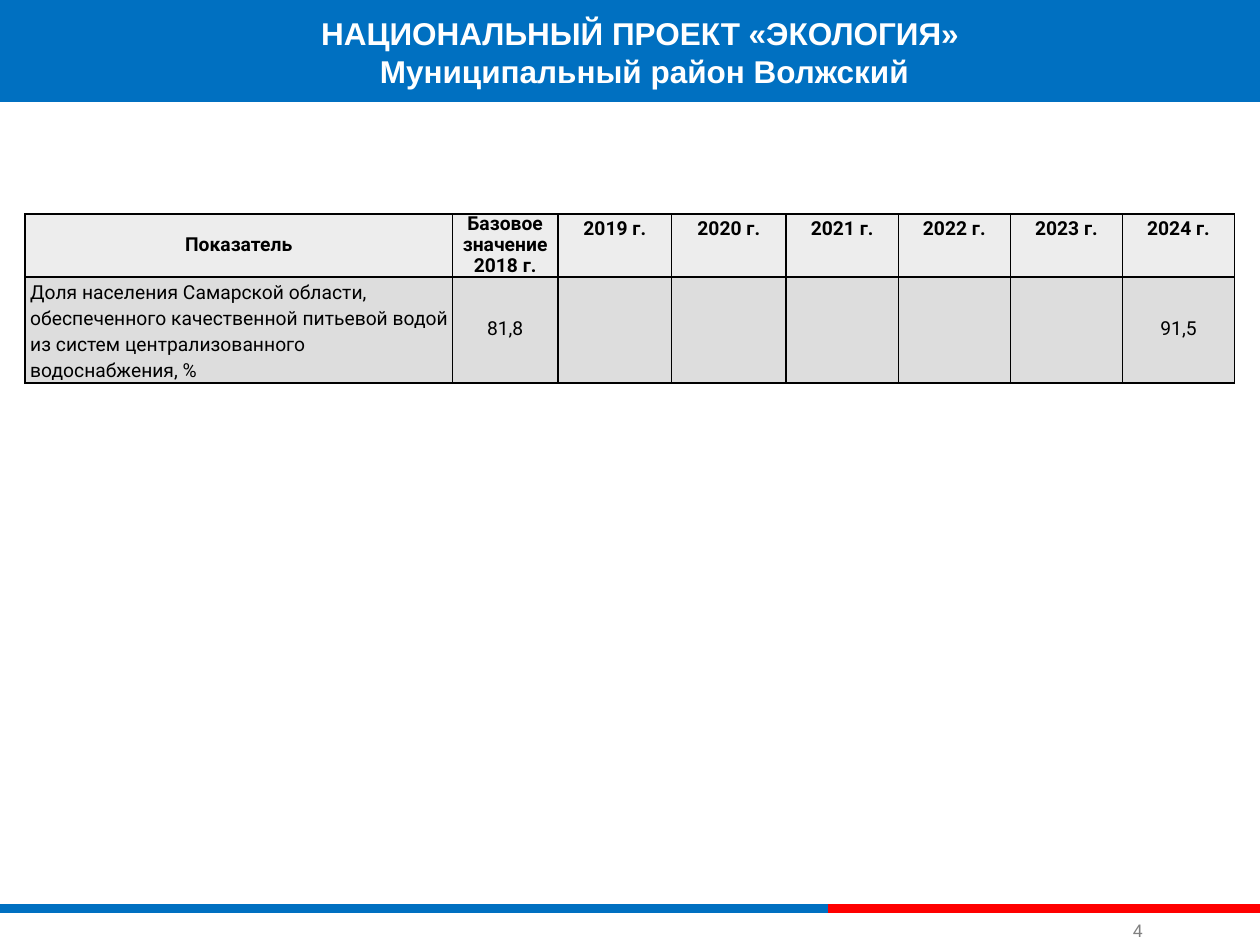
import dataclasses
import typing

import lxml.etree
import pptx
import pptx.dml.color
import pptx.enum.shapes
import pptx.enum.text
import pptx.oxml.ns
import pptx.util

Inches = pptx.util.Inches
Pt = pptx.util.Pt
Align = pptx.enum.text.PP_ALIGN
Anchor = pptx.enum.text.MSO_ANCHOR
qn = pptx.oxml.ns.qn

COLORS = {"blue": "0070C1", "red": "FF0000", "white": "FFFFFF", "black": "000000",
          "number": "808080", "header": "EDEDED", "body": "BFBFBF"}
BODY_ALPHA = 52000
COLUMN_WIDTHS = [3.39, 0.84, 0.9, 0.91] + [0.89] * 4
ROW_HEIGHTS = [0.5, 0.84]


@dataclasses.dataclass
class Stripe:
    start: float
    end: float
    color: str


@dataclasses.dataclass
class CellText:
    text: str
    anchor: typing.Any = Anchor.MIDDLE
    align: typing.Any = Align.CENTER
    spacing: typing.Any = Pt(12)
    margin: float = 0.01


def rgb(name: str) -> pptx.dml.color.RGBColor:
    return pptx.dml.color.RGBColor.from_string(COLORS[name])


def set_font(font, color: str, **formats) -> None:
    for name, value in formats.items():
        setattr(font, name, value)
    font.color.rgb = rgb(color)


def set_frame(frame, horizontal: float, vertical: float, anchor, wrap: bool) -> None:
    formats = {"margin_left": Inches(horizontal), "margin_right": Inches(horizontal),
               "margin_top": Inches(vertical), "margin_bottom": Inches(vertical),
               "vertical_anchor": anchor, "word_wrap": wrap}
    for name, value in formats.items():
        setattr(frame, name, value)


def draw_stripe(page, stripe: Stripe) -> None:
    line = page.shapes.add_connector(
        pptx.enum.shapes.MSO_CONNECTOR.STRAIGHT,
        Inches(stripe.start), Inches(7.21), Inches(stripe.end), Inches(7.21))
    line.line.color.rgb = rgb(stripe.color)
    line.line.width = Pt(5)
    lxml.etree.SubElement(line.element.spPr, qn("a:effectLst"))


def set_borders(cell) -> None:
    properties = cell._tc.get_or_add_tcPr()
    for side in ("lnL", "lnR", "lnT", "lnB"):
        border = lxml.etree.SubElement(properties, qn(f"a:{side}"), w=str(Pt(1)))
        fill = lxml.etree.SubElement(border, qn("a:solidFill"))
        lxml.etree.SubElement(fill, qn("a:srgbClr"), val=COLORS["black"])


def fill_cell(cell, color: str, alpha: typing.Optional[int] = None) -> None:
    cell.fill.solid()
    cell.fill.fore_color.rgb = rgb(color)
    if alpha:
        tone = cell._tc.tcPr.find(qn("a:solidFill")).find(qn("a:srgbClr"))
        lxml.etree.SubElement(tone, qn("a:alpha"), val=str(alpha))


def write_cell(cell, content: CellText, bold: bool) -> None:
    formats = {"margin_left": Inches(content.margin), "margin_right": Inches(content.margin),
               "margin_top": 0, "margin_bottom": 0, "vertical_anchor": content.anchor}
    for name, value in formats.items():
        setattr(cell, name, value)
    para = cell.text_frame.paragraphs[0]
    para.alignment = content.align
    para.line_spacing = content.spacing
    if content.align == Align.LEFT:
        para._p.get_or_add_pPr().set("marL", str(Inches(0.03)))
    span = para.add_run()
    span.text = content.text
    set_font(span.font, "black", name="Roboto", size=Pt(11), bold=bold)


def draw_table(page, rows: typing.List[typing.List[typing.Optional[CellText]]]) -> None:
    table = page.shapes.add_table(
        len(rows), len(COLUMN_WIDTHS), Inches(0.2), Inches(1.7),
        Inches(sum(COLUMN_WIDTHS)), Inches(sum(ROW_HEIGHTS))).table
    for column, width in zip(table.columns, COLUMN_WIDTHS):
        column.width = Inches(width)
    for row, height in zip(table.rows, ROW_HEIGHTS):
        row.height = Inches(height)
    for row_index, row in enumerate(rows):
        header = row_index == 0
        for column_index, content in enumerate(row):
            cell = table.cell(row_index, column_index)
            set_borders(cell)
            if header:
                fill_cell(cell, "header")
            else:
                fill_cell(cell, "body", BODY_ALPHA)
            if content:
                write_cell(cell, content, bold=header)


def draw_title(page, lines: typing.List[str]) -> None:
    title = page.shapes.title
    title.left, title.top = Inches(2.47), Inches(0.06)
    title.width, title.height = Inches(5.29), Inches(0.71)
    frame = title.text_frame
    set_frame(frame, 0.05, 0.05, Anchor.TOP, True)
    frame.auto_size = pptx.enum.text.MSO_AUTO_SIZE.NONE
    frame.text = "\n".join(lines)
    for para in frame.paragraphs:
        para.alignment = Align.CENTER
        set_font(para.runs[0].font, "white", name="Arial", size=Pt(18), bold=True)
    # Bring the title in front of the band
    title.element.getparent().append(title.element)


def main() -> None:
    deck = pptx.Presentation()
    deck.slide_width, deck.slide_height = Inches(10), Inches(7.5)
    page = deck.slides.add_slide(deck.slide_layouts[5])

    # Footer stripes and header band
    for stripe in (Stripe(0, 6.57, "blue"), Stripe(6.57, 10, "red")):
        draw_stripe(page, stripe)
    band = page.shapes.add_shape(pptx.enum.shapes.MSO_SHAPE.RECTANGLE,
                                 0, Inches(-0.03), Inches(10), Inches(0.84))
    band.shadow.inherit = False
    band.fill.solid()
    band.fill.fore_color.rgb = rgb("blue")
    band.line.fill.background()

    # Page number
    number = page.shapes.add_textbox(Inches(8.94), Inches(7.27), Inches(0.19), Inches(0.25))
    set_frame(number.text_frame, 0.05, 0.05, Anchor.BOTTOM, False)
    span = number.text_frame.paragraphs[0].add_run()
    span.text = "4"
    set_font(span.font, "number", name="Roboto", size=Pt(10))

    draw_title(page, ["НАЦИОНАЛЬНЫЙ ПРОЕКТ «ЭКОЛОГИЯ» ", "Муниципальный район Волжский"])

    # Indicator table
    years = [CellText(f"{year} г.", anchor=Anchor.TOP, spacing=1.15)
             for year in range(2019, 2025)]
    indicator = CellText(
        "Доля населения Самарской области, обеспеченного качественной питьевой водой "
        "из систем централизованного водоснабжения, %", align=Align.LEFT, spacing=1.15)
    draw_table(page, [
        [CellText("Показатель"),
         CellText("Базовое значение 2018 г.", anchor=Anchor.BOTTOM), *years],
        [indicator, CellText("81,8"), *[None] * 5, CellText("91,5", margin=0.04)],
    ])

    deck.save("out.pptx")


if __name__ == "__main__":
    main()
